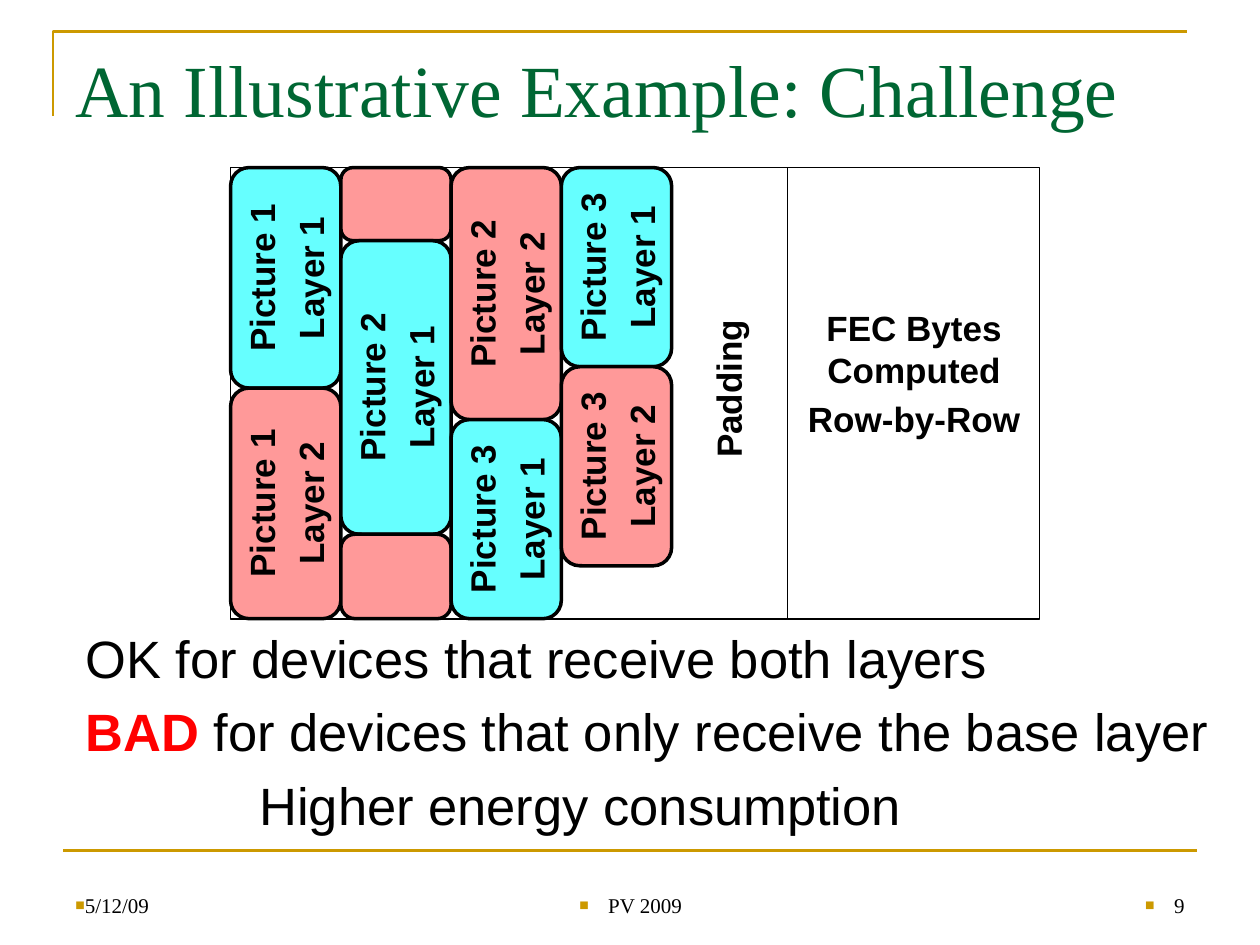
import pptx
import pptx.util
import pptx.dml.color
import pptx.enum.shapes
import pptx.enum.text
import pptx.oxml.ns
import lxml.etree

Inches, Pt = pptx.util.Inches, pptx.util.Pt
SHAPE = pptx.enum.shapes.MSO_SHAPE
ALIGN = pptx.enum.text.PP_ALIGN
ANCHOR = pptx.enum.text.MSO_ANCHOR
COLORS = {"gold": "CC9900", "title": "006633", "text": "000000", "bad": "FF0000",
          "base": "66FFFF", "enhancement": "FF9999"}
LEFT, TOP, COLUMN = 1.83, 1.33, 0.875
COLUMNS = [
    [(1.75, "base", ["Picture 1", "Layer 1"]), (1.83, "enhancement", ["Picture 1", "Layer 2"])],
    [(0.58, "enhancement", []), (2.33, "base", ["Picture 2", "Layer 1"]),
     (0.67, "enhancement", [])],
    [(2, "enhancement", ["Picture 2", "Layer 2"]), (1.58, "base", ["Picture 3", "Layer 1"])],
    [(1.58, "base", ["Picture 3", "Layer 1"]), (1.58, "enhancement", ["Picture 3", "Layer 2"])],
]


def rgb(name):
    """Return the named colour."""
    return pptx.dml.color.RGBColor.from_string(COLORS[name])


def place(sp, x, y, w, h):
    """Move and size a shape in inches."""
    sp.left, sp.top, sp.width, sp.height = map(Inches, (x, y, w, h))


def add_run(p, text, size, color="text", bold=False, font="Arial"):
    """Append one formatted run to a paragraph."""
    r = p.add_run()
    r.text = text
    r.font.name, r.font.size, r.font.bold = font, Pt(size), bold
    r.font.color.rgb = rgb(color)


def set_indent(p, margin, indent, bullet=False):
    """Set the paragraph indent and an optional square gold bullet."""
    pPr = p._p.get_or_add_pPr()
    pPr.set("marL", str(Inches(margin)))
    pPr.set("indent", str(Inches(indent)))

    def add(tag, **attrs):
        return lxml.etree.SubElement(pPr, pptx.oxml.ns.qn(tag), **attrs)

    if not bullet:
        add("a:buNone")
        return
    lxml.etree.SubElement(add("a:buClr"), pptx.oxml.ns.qn("a:srgbClr"), val=COLORS["gold"])
    add("a:buSzPct", val="75000")
    add("a:buFont", typeface="Arial")
    add("a:buChar", char="■")


def add_lines(tf, lines):
    """Write body lines given as (margin, indent, runs)."""
    tf.word_wrap = True
    tf.auto_size = pptx.enum.text.MSO_AUTO_SIZE.NONE
    for i, (margin, indent, runs) in enumerate(lines):
        p = tf.add_paragraph() if i else tf.paragraphs[0]
        p.space_before = Pt(6)
        set_indent(p, margin, indent)
        for text, color, bold in runs:
            add_run(p, text, 30, color, bold)


def add_box(s, kind, x, y, w, h, lines=(), fill=None, line=None, upright=False):
    """Add a box by its visible bounds, its text turned upward if upright."""
    if upright:
        x, y, w, h = x + (w - h) / 2, y + (h - w) / 2, h, w
    sp = s.shapes.add_shape(kind, *map(Inches, (x, y, w, h)))
    sp.shadow.inherit = False
    sp.rotation = 270 if upright else 0
    if fill:
        sp.fill.solid()
        sp.fill.fore_color.rgb = rgb(fill)
    else:
        sp.fill.background()
    if line:
        sp.line.color.rgb, sp.line.width = rgb("text"), Pt(line)
    else:
        sp.line.fill.background()
    tf = sp.text_frame
    tf.word_wrap, tf.vertical_anchor = True, ANCHOR.MIDDLE
    for i, text in enumerate(lines):
        p = tf.add_paragraph() if i else tf.paragraphs[0]
        p.alignment, p.space_before = ALIGN.CENTER, Pt(4)
        add_run(p, text, 20, bold=True)


def add_rules(s):
    """Draw the gold corner and the footer rule."""
    fb = s.shapes.build_freeform(Inches(0.42), Inches(0.92))
    fb.add_line_segments([(Inches(0.42), Inches(0.25)), (Inches(9.42), Inches(0.25))], close=False)
    corner = fb.convert_to_shape()
    corner.shadow.inherit = False
    corner.fill.background()
    rule = s.shapes.add_connector(pptx.enum.shapes.MSO_CONNECTOR.STRAIGHT,
                                  *map(Inches, (0.5, 6.75, 9.5, 6.75)))
    lxml.etree.SubElement(rule._element.spPr, pptx.oxml.ns.qn("a:effectLst"))
    for sp in (corner, rule):
        sp.line.color.rgb, sp.line.width = rgb("gold"), Pt(1.5)


def add_footer(s, text, x, w, align, gap):
    """Add a bulleted footer text."""
    tf = s.shapes.add_textbox(*map(Inches, (x, 6.83, w, 0.5))).text_frame
    tf.word_wrap, tf.vertical_anchor = True, ANCHOR.BOTTOM
    p = tf.paragraphs[0]
    p.alignment = align
    set_indent(p, gap, -gap, bullet=True)
    add_run(p, text, 12, font="Times New Roman")


def add_diagram(s):
    """Draw the packet block with its stacked layers."""
    add_box(s, SHAPE.FLOWCHART_PROCESS, LEFT, TOP, 4.42, 3.58, line=1)
    add_box(s, SHAPE.FLOWCHART_PROCESS, LEFT + 4.42, TOP, 2, 3.58, line=1)
    rounded = SHAPE.FLOWCHART_ALTERNATE_PROCESS
    for i, column in enumerate(COLUMNS):
        y = TOP
        for h, fill, lines in column:
            add_box(s, rounded, LEFT + i * COLUMN, y, COLUMN, h, lines, fill, 2, upright=True)
            y += h
    add_box(s, rounded, 5.34, 1.75, COLUMN, 2.67, ["Padding"], upright=True)
    add_box(s, rounded, 6.17, 2, 2.17, 1.92, ["FEC Bytes Computed", "Row-by-Row"])


def main():
    """Build and save the slide."""
    prs = pptx.Presentation()
    prs.slide_width, prs.slide_height = Inches(10), Inches(7.5)
    s = prs.slides.add_slide(prs.slide_layouts[1])
    add_rules(s)
    title, body = s.shapes.title, s.placeholders[1]
    place(title, 0.5, 0.3, 9, 1.25)
    tf = title.text_frame
    tf.auto_size = pptx.enum.text.MSO_AUTO_SIZE.NONE
    tf.vertical_anchor = ANCHOR.TOP
    tf.paragraphs[0].alignment = ALIGN.LEFT
    add_run(tf.paragraphs[0], "An Illustrative Example: Challenge", 42, "title",
            font="Times New Roman")
    place(body, 0.58, 4.92, 9, 0.75)
    add_lines(body.text_frame, [
        (0.38, -0.38, [("OK for devices that receive both layers", "text", False)])])
    add_footer(s, "5/12/09", 0.5, 2.33, ALIGN.LEFT, 0)
    add_footer(s, "PV 2009", 3.42, 3.17, ALIGN.CENTER, 0.23)
    add_footer(s, "9", 7.17, 2.33, ALIGN.RIGHT, 0.23)
    add_diagram(s)
    notes = s.shapes.add_textbox(*map(Inches, (0.58, 5.5, 9.25, 1.33)))
    add_lines(notes.text_frame, [
        (0.38, -0.38, [("BAD ", "bad", True),
                       ("for devices that only receive the base layer", "text", False)]),
        (1.38, 0, [("Higher energy consumption", "text", False)])])
    prs.save("out.pptx")


if __name__ == "__main__":
    main()
